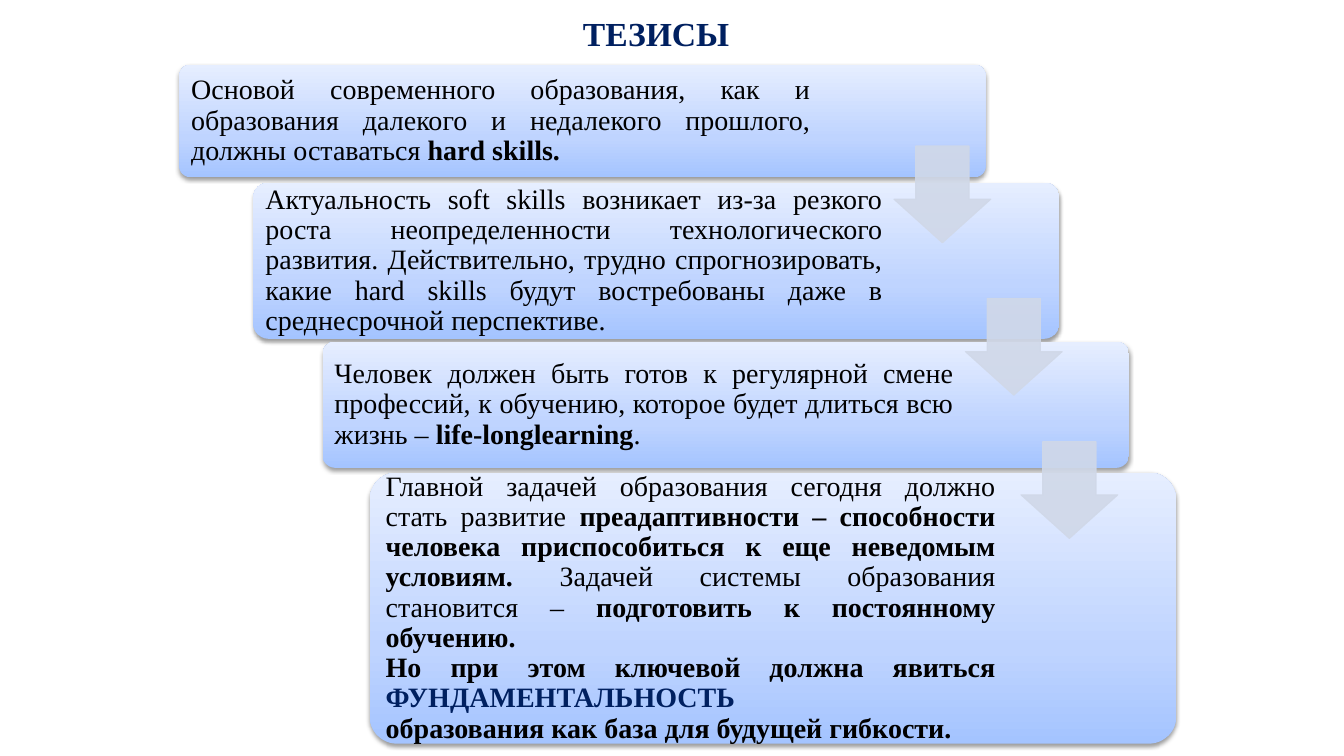
import copy

import pptx
import pptx.dml.color
import pptx.enum.shapes
import pptx.enum.text
import pptx.oxml
import pptx.oxml.ns
import pptx.util

Cm, Pt = pptx.util.Cm, pptx.util.Pt
SHAPE = pptx.enum.shapes.MSO_SHAPE
ALIGN = pptx.enum.text.PP_ALIGN
ANCHOR = pptx.enum.text.MSO_ANCHOR

COLOURS = {
    "navy": "002060", "text": "000000", "arrow": "D0D8E8",
    "card_bottom": "A4C4FF", "card_middle": "BFD4FF", "card_top": "E6EEFF",
}
CARD_WIDTH, ARROW_SIZE, INSET = 20.32, 2.44, 0.2


def colour(name):
    return pptx.dml.color.RGBColor.from_string(COLOURS[name])


class Slide:
    """Holds the style and the current page."""

    font = "Times New Roman"

    def __init__(self, deck):
        self.page = deck.slides.add_slide(deck.slide_layouts[6])

    def shape(self, kind, left, top, width, height, adjustments):
        shape = self.page.shapes.add_shape(kind, Cm(left), Cm(top), Cm(width), Cm(height))
        for index, value in enumerate(adjustments):
            shape.adjustments[index] = value
        shape.shadow.inherit = False
        return shape

    def card(self, left, top, height):
        card = self.shape(SHAPE.ROUNDED_RECTANGLE, left, top, CARD_WIDTH, height, [0.1])
        card.line.fill.background()
        # Three-stop gradient, running upwards
        card.fill.gradient()
        card.fill.gradient_angle = 90
        first = card.fill.gradient_stops[0]._gs
        first.addnext(copy.deepcopy(first))
        stops = [(0, "card_bottom"), (0.35, "card_middle"), (1, "card_top")]
        for stop, (position, name) in zip(card.fill.gradient_stops, stops):
            stop.position = position
            stop.color.rgb = colour(name)
        # Soft shadow below
        effects = card._element.spPr.find(pptx.oxml.ns.qn("a:effectLst"))
        effects.append(pptx.oxml.parse_xml(
            f'<a:outerShdw {pptx.oxml.ns.nsdecls("a")} blurRad="{Pt(3.1)}" dist="{Pt(1.6)}"'
            ' dir="5400000" rotWithShape="0"><a:srgbClr val="000000">'
            '<a:alpha val="38000"/></a:srgbClr></a:outerShdw>'))

    def arrow(self, left, top):
        arrow = self.shape(SHAPE.DOWN_ARROW, left, top, ARROW_SIZE, ARROW_SIZE, [0.55, 0.45])
        arrow.fill.solid()
        arrow.fill.fore_color.rgb = colour("arrow")
        arrow.line.color.rgb = colour("arrow")
        arrow.line.width = Pt(0.75)
        for tint in arrow._element.spPr.iter(pptx.oxml.ns.qn("a:srgbClr")):
            tint.append(pptx.oxml.parse_xml(
                f'<a:alpha {pptx.oxml.ns.nsdecls("a")} val="90000"/>'))

    def text_box(self, left, top, width, height):
        box = self.page.shapes.add_textbox(Cm(left), Cm(top), Cm(width), Cm(height))
        box.text_frame.word_wrap = True
        return box.text_frame

    def title(self, text, left, top, width, height):
        para = self.text_box(left, top, width, height).paragraphs[0]
        para.text = text
        para.alignment = ALIGN.CENTER
        para.font.name, para.font.size, para.font.bold = self.font, Pt(24), True
        para.font.color.rgb = colour("navy")

    def body(self, paragraphs, left, top, width, height):
        frame = self.text_box(left, top, width, height)
        frame.vertical_anchor = ANCHOR.MIDDLE
        frame.margin_left = frame.margin_right = Cm(INSET)
        frame.margin_top = frame.margin_bottom = Cm(INSET)
        for index, spans in enumerate(paragraphs):
            para = frame.add_paragraph() if index else frame.paragraphs[0]
            para.alignment = ALIGN.JUSTIFY
            para.line_spacing = 0.9
            para.font.name, para.font.size = self.font, Pt(20)
            for text, bold, name in spans:
                span = para.add_run()
                span.text = text
                span.font.name, span.font.size = self.font, Pt(20)
                span.font.bold = bold
                span.font.color.rgb = colour(name)


def plain(text):
    return text, False, "text"


def strong(text, name="text"):
    return text, True, name


# Card left, top, height; text padding and width; paragraphs
THESES = [
    (4.52, 1.63, 2.84, 0.1, 16, [[
        plain("Основой современного образования, как и образования далекого "
              "и недалекого прошлого, должны оставаться "),
        strong("hard skills.")]]),
    (6.38, 4.6, 3.94, 0.11, 15.95, [[
        plain("Актуальность soft skills возникает из-за резкого роста неопределенности "
              "технологического развития. Действительно, трудно спрогнозировать, какие "
              "hard skills будут востребованы даже в среднесрочной перспективе.")]]),
    (8.13, 8.61, 3.18, 0.1, 16, [[
        plain("Человек должен быть готов к регулярной смене профессий, "
              "к обучению, которое будет длиться всю жизнь – "),
        strong("life-longlearning"), plain(".")]]),
    (9.32, 11.91, 6.83, 0.2, 15.77, [
        [plain("Главной задачей образования сегодня должно стать развитие "),
         strong("преадаптивности – способности человека приспособиться "
                "к еще неведомым условиям."),
         plain(" Задачей системы образования становится – "),
         strong("подготовить к постоянному обучению.")],
        [strong("Но при этом ключевой должна явиться "),
         strong("ФУНДАМЕНТАЛЬНОСТЬ ", "navy")],
        [strong("образования как база для будущей гибкости.")]]),
]
ARROWS = [(22.53, 3.68), (24.33, 7.52), (25.73, 11.13)]


def main():
    deck = pptx.Presentation()
    deck.slide_width, deck.slide_height = Cm(33.87), Cm(19.05)
    slide = Slide(deck)

    # Heading
    slide.title("ТЕЗИСЫ", 5.13, 0.2, 22.81, 2.13)

    # Staircase of theses
    for left, top, height, pad, width, paragraphs in THESES:
        slide.card(left, top, height)
        slide.body(paragraphs, left + pad, top + pad, width, height - 2 * pad)

    # Arrows between the steps
    for left, top in ARROWS:
        slide.arrow(left, top)

    deck.save("out.pptx")


if __name__ == "__main__":
    main()
